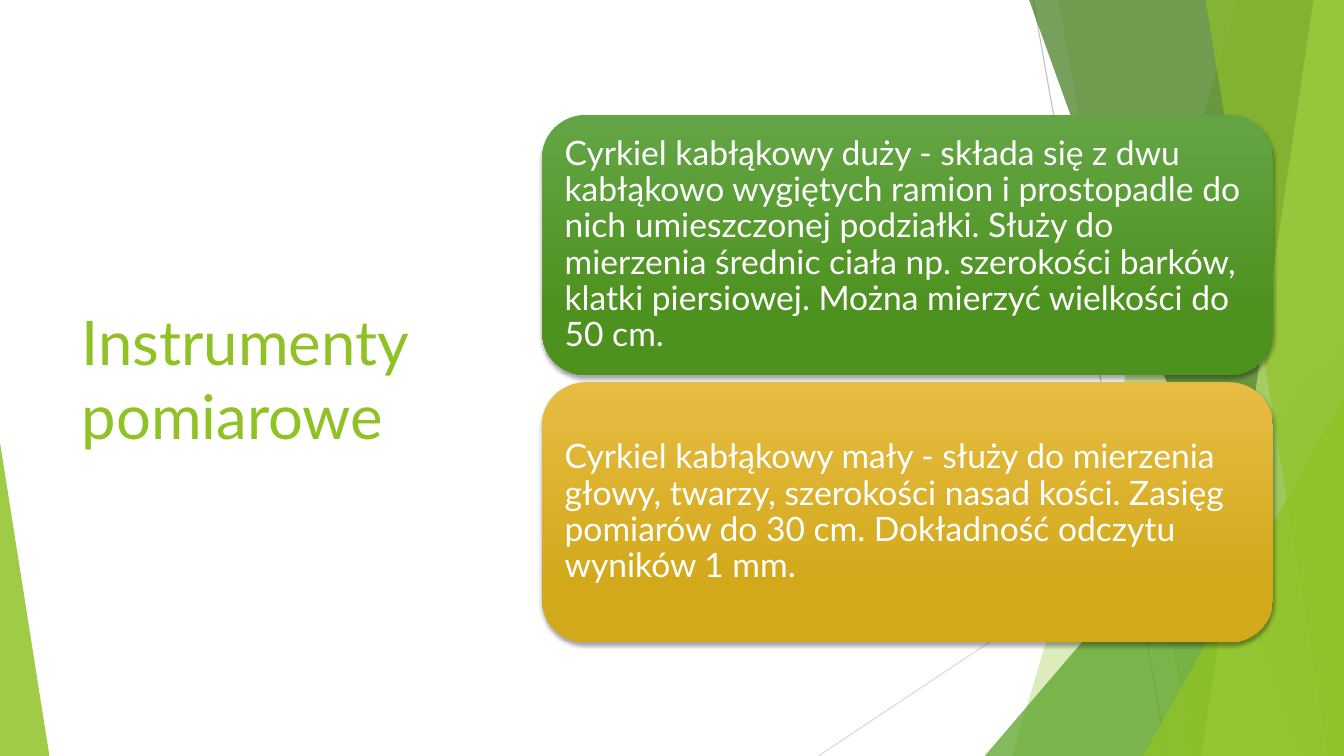
from dataclasses import dataclass

from lxml.etree import SubElement
from pptx import Presentation
from pptx.dml.color import RGBColor
from pptx.enum.shapes import MSO_CONNECTOR, MSO_SHAPE
from pptx.enum.text import MSO_ANCHOR, MSO_AUTO_SIZE, PP_ALIGN
from pptx.oxml.ns import qn
from pptx.util import Pt

WIDTH, HEIGHT = 960, 540


@dataclass(frozen=True)
class Theme:
    font: str = "Lato"
    title_size: int = 44
    body_size: int = 24
    lime: str = "90C226"
    green: str = "54A021"
    dark_green: str = "3F7819"
    pale_lime: str = "C0E474"
    white: str = "FFFFFF"
    shadow: str = "000000"
    grey: str = "BFBFBF"
    light_grey: str = "D9D9D9"
    green_card: tuple = ("63A545", "4D921E")
    gold_card: tuple = ("E7BC43", "D2A91B")


def write_text(frame, text, *, font, size, color, line_spacing=1.0):
    frame.word_wrap = True
    frame.auto_size = MSO_AUTO_SIZE.NONE
    frame.vertical_anchor = MSO_ANCHOR.MIDDLE
    paragraph = frame.paragraphs[0]
    paragraph.alignment = PP_ALIGN.LEFT
    paragraph.line_spacing = line_spacing
    run = paragraph.add_run()
    run.text = text
    run.font.name = font
    run.font.size = Pt(size)
    run.font.color.rgb = RGBColor.from_string(color)


def set_alpha(color_element, percent):
    SubElement(color_element, qn("a:alpha"), val=str(percent * 1000))


class SlideBuilder:
    def __init__(self, slide, theme):
        self.slide = slide
        self.theme = theme

    def title(self, text, left, top, width, height):
        shape = self.slide.shapes.title
        shape.left, shape.top = Pt(left), Pt(top)
        shape.width, shape.height = Pt(width), Pt(height)
        write_text(shape.text_frame, text, font=self.theme.font,
                   size=self.theme.title_size, color=self.theme.lime)

    def line(self, start, end, color):
        connector = self.slide.shapes.add_connector(
            MSO_CONNECTOR.STRAIGHT, *(Pt(value) for value in start + end))
        connector.line.color.rgb = RGBColor.from_string(color)
        connector.line.width = Pt(0.75)
        SubElement(connector.element.spPr, qn("a:effectLst"))

    def tint(self, shape, color, opacity):
        shape.shadow.inherit = False
        shape.line.fill.background()
        shape.fill.solid()
        shape.fill.fore_color.rgb = RGBColor.from_string(color)
        set_alpha(shape.element.spPr.find(".//" + qn("a:srgbClr")), opacity)

    def wedge(self, top_x, bottom_x, color, opacity):
        """Full-height band from a slanted edge to the right side."""
        builder = self.slide.shapes.build_freeform(Pt(top_x), Pt(0))
        corners = [(WIDTH, 0), (WIDTH, HEIGHT), (bottom_x, HEIGHT)]
        builder.add_line_segments([(Pt(x), Pt(y)) for x, y in corners])
        self.tint(builder.convert_to_shape(), color, opacity)

    def triangle(self, left, top, width, apex, color, opacity):
        """Triangle that stands on the bottom edge of the slide."""
        shape = self.slide.shapes.add_shape(
            MSO_SHAPE.ISOSCELES_TRIANGLE,
            Pt(left), Pt(top), Pt(width), Pt(HEIGHT - top))
        shape.adjustments[0] = apex
        self.tint(shape, color, opacity)

    def card(self, text, left, top, width, height, colors):
        shape = self.slide.shapes.add_shape(
            MSO_SHAPE.ROUNDED_RECTANGLE,
            Pt(left), Pt(top), Pt(width), Pt(height))
        shape.line.fill.background()
        shape.fill.gradient()
        shape.fill.gradient_angle = 270
        for stop, position, color in zip(
                shape.fill.gradient_stops, (0, 0.78), colors):
            stop.position = position
            stop.color.rgb = RGBColor.from_string(color)
        self.soft_shadow(shape)
        frame = shape.text_frame
        frame.margin_left = frame.margin_right = Pt(7.2)
        frame.margin_top = frame.margin_bottom = Pt(7.2)
        write_text(frame, text, font=self.theme.font, line_spacing=0.9,
                   size=self.theme.body_size, color=self.theme.white)

    def soft_shadow(self, shape):
        shape.shadow.inherit = False
        effects = shape.element.spPr.find(qn("a:effectLst"))
        shadow = SubElement(effects, qn("a:outerShdw"), blurRad=str(Pt(3)),
                            dist=str(Pt(2)), dir="5400000", rotWithShape="0")
        color = SubElement(shadow, qn("a:srgbClr"), val=self.theme.shadow)
        set_alpha(color, 35)


def main():
    theme = Theme()
    presentation = Presentation()
    presentation.slide_width, presentation.slide_height = Pt(WIDTH), Pt(HEIGHT)
    slide = presentation.slides.add_slide(presentation.slide_layouts[5])
    builder = SlideBuilder(slide, theme)

    # Background facets, from back to front
    builder.line((738, 0), (833.8, HEIGHT), theme.grey)
    builder.line((WIDTH, 290.2), (584.6, HEIGHT), theme.light_grey)
    builder.wedge(884.2, 722.9, theme.lime, 30)
    builder.wedge(756, 851.8, theme.lime, 20)
    builder.triangle(703.4, 239.8, 256.6, 1, theme.green, 72)
    builder.wedge(735.1, 929.5, theme.dark_green, 70)
    builder.wedge(938.2, 858.2, theme.pale_lime, 70)
    builder.wedge(861.1, 949, theme.lime, 65)
    builder.triangle(816.5, 283, 143.5, 1, theme.lime, 80)
    builder.triangle(0, 316.1, 35.3, 0, theme.lime, 85)

    # Title
    builder.title("Instrumenty pomiarowe", 51.1, 108.7, 279.4, 322.6)

    # Instrument cards
    cards = [
        ("Cyrkiel kabłąkowy duży - składa się z dwu kabłąkowo wygiętych "
         "ramion i prostopadle do nich umieszczonej podziałki. Służy do "
         "mierzenia średnic ciała np. szerokości barków, klatki piersiowej. "
         "Można mierzyć wielkości do 50 cm.", theme.green_card),
        ("Cyrkiel kabłąkowy mały - służy do mierzenia głowy, twarzy, "
         "szerokości nasad kości. Zasięg pomiarów do 30 cm. Dokładność "
         "odczytu wyników 1 mm.", theme.gold_card),
    ]
    card_height, gap = 185.8, 5.1
    for index, (text, colors) in enumerate(cards):
        top = 82.1 + index * (card_height + gap)
        builder.card(text, 387.2, top, 522, card_height, colors)

    presentation.save("out.pptx")


if __name__ == "__main__":
    main()
